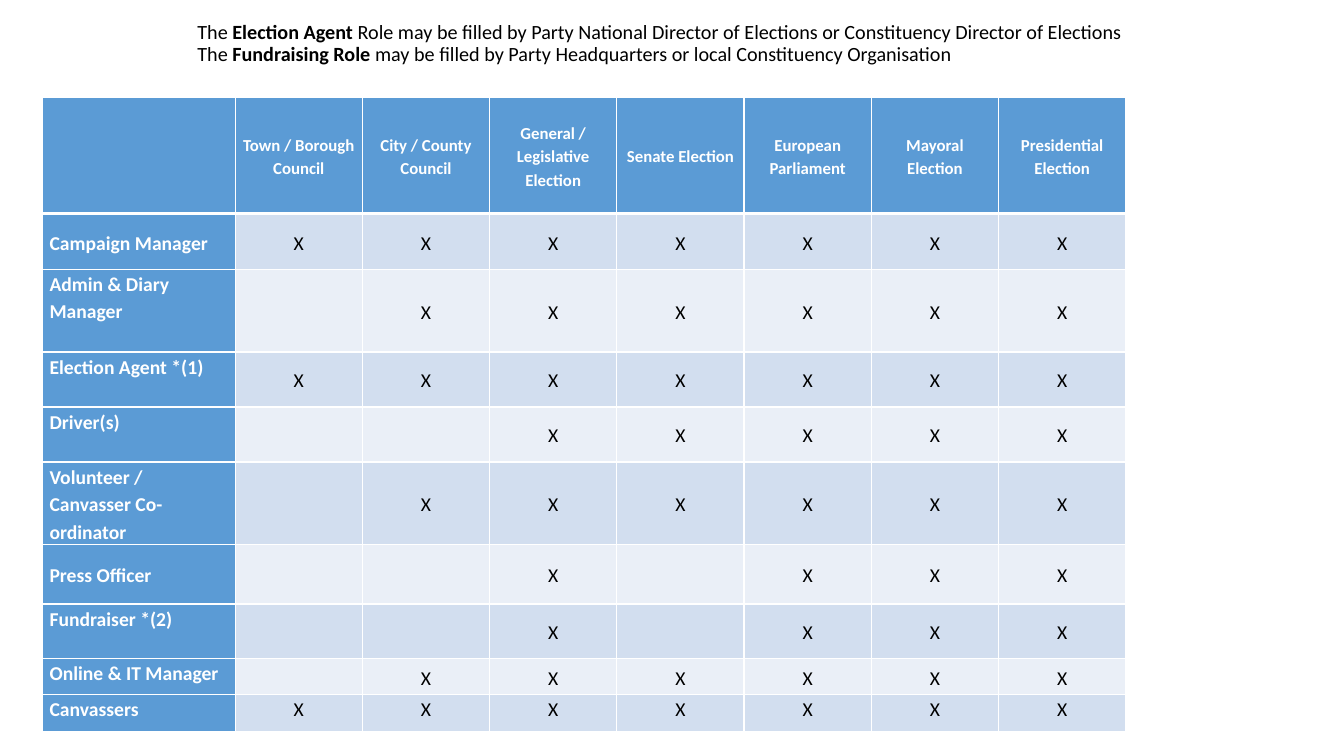
"""Build the slide that matches campaign roles to types of election."""
from dataclasses import dataclass

from lxml.etree import SubElement
from pptx import Presentation
from pptx.dml.color import RGBColor as Rgb
from pptx.enum.text import MSO_ANCHOR as Anchor, PP_ALIGN as Align
from pptx.oxml.ns import qn
from pptx.util import Pt

NOTES = [
    ("The ", "Election Agent", " Role may be filled by Party National Director of "
     "Elections or Constituency Director of Elections "),
    ("The ", "Fundraising Role", " may be filled by Party Headquarters or local "
     "Constituency Organisation"),
]
ELECTIONS = ["Town / Borough Council", "City / County Council",
             "General / Legislative Election", "Senate Election",
             "European Parliament", "Mayoral Election", "Presidential Election"]
MID, TOP = Anchor.MIDDLE, Anchor.TOP
ROLES = [
    ("Campaign Manager", "XXXXXXX", 39.8, MID, MID),
    ("Admin & Diary Manager", "-XXXXXX", 59, TOP, MID),
    ("Election Agent *(1)", "XXXXXXX", 39.3, TOP, MID),
    ("Driver(s)", "--XXXXX", 39.3, TOP, MID),
    ("Volunteer / Canvasser Co-ordinator", "-XXXXXX", 59, MID, MID),
    ("Press Officer", "--X-XXX", 42.5, MID, MID),
    ("Fundraiser *(2)", "--X-XXX", 39, TOP, MID),
    ("Online & IT Manager", "-XXXXXX", 25.6, TOP, MID),
    ("Canvassers", "XXXXXXX", 26.4, TOP, TOP),
]
HEADER_HEIGHT, ROLE_WIDTH, ELECTION_WIDTH = 82.8, 137.6, 90.9
TABLE_LEFT, TABLE_TOP = 30.4, 69.8


@dataclass(frozen=True)
class Theme:
    """Colours and type of the slide."""
    font: str = "Calibri"
    note_size: float = 14.4
    header_size: float = 12
    body_size: float = 14
    black: str = "000000"
    white: str = "FFFFFF"
    blue: str = "5B9BD5"
    bands: tuple = ("D2DEEF", "EAEFF7")


THEME = Theme()


def add_run(paragraph, text, size, color, bold):
    """Append one styled run."""
    run = paragraph.add_run()
    run.text = text
    run.font.name, run.font.size, run.font.bold = THEME.font, Pt(size), bold
    run.font.color.rgb = Rgb.from_string(color)


def add_border(cell, side, width):
    """Draw one white edge of a cell."""
    edge = SubElement(cell._tc.get_or_add_tcPr(), qn(f"a:ln{side}"), w=str(Pt(width)))
    fill = SubElement(edge, qn("a:solidFill"))
    SubElement(fill, qn("a:srgbClr"), val=THEME.white)


def fill_cell(cell, text, fill, size, color, bold, align, anchor, top=1, bottom=1):
    """Set the edges, fill and text of a cell."""
    for side, width in (("L", 1), ("R", 1), ("T", top), ("B", bottom)):
        add_border(cell, side, width)
    cell.fill.solid()
    cell.fill.fore_color.rgb = Rgb.from_string(fill)
    cell.margin_left = cell.margin_right = Pt(5)
    cell.margin_top = cell.margin_bottom = Pt(0)
    cell.vertical_anchor = anchor
    if text:
        paragraph = cell.text_frame.paragraphs[0]
        paragraph.alignment, paragraph.line_spacing = align, 1.15
        add_run(paragraph, text, size, color, bold)


def add_notes(slide):
    """Write the two remarks above the table."""
    frame = slide.shapes.add_textbox(Pt(133.9), Pt(9.4), Pt(691.9), Pt(43.9)).text_frame
    frame.word_wrap, frame.vertical_anchor = True, MID
    paragraph = frame.paragraphs[0]
    paragraph.line_spacing = 0.9
    for index, (lead, role, rest) in enumerate(NOTES):
        if index:
            paragraph.add_line_break()
        for text, bold in ((lead, False), (role, True), (rest, False)):
            add_run(paragraph, text, THEME.note_size, THEME.black, bold)


def add_roles(slide):
    """Lay out the table of roles by election."""
    heights = [HEADER_HEIGHT] + [role[2] for role in ROLES]
    widths = [ROLE_WIDTH] + [ELECTION_WIDTH] * len(ELECTIONS)
    table = slide.shapes.add_table(
        len(heights), len(widths), Pt(TABLE_LEFT), Pt(TABLE_TOP),
        Pt(sum(widths)), Pt(sum(heights))).table
    table.horz_banding = False
    for column, width in zip(table.columns, widths):
        column.width = Pt(width)
    for row, height in zip(table.rows, heights):
        row.height = Pt(height)

    for col, election in enumerate([""] + ELECTIONS):
        fill_cell(table.cell(0, col), election, THEME.blue, THEME.header_size,
                  THEME.white, True, Align.CENTER, MID, bottom=3)
    for row, (role, marks, _, role_anchor, mark_anchor) in enumerate(ROLES, 1):
        top = 3 if row == 1 else 1
        fill_cell(table.cell(row, 0), role, THEME.blue, THEME.body_size,
                  THEME.white, True, Align.LEFT, role_anchor, top)
        for col, mark in enumerate(marks, 1):
            fill_cell(table.cell(row, col), mark.strip("-"), THEME.bands[(row - 1) % 2],
                      THEME.body_size, THEME.black, False, Align.CENTER, mark_anchor, top)


def main():
    """Create and save the presentation."""
    deck = Presentation()
    deck.slide_width, deck.slide_height = Pt(960), Pt(540)
    slide = deck.slides.add_slide(deck.slide_layouts[6])
    add_notes(slide)
    add_roles(slide)
    deck.save("out.pptx")


if __name__ == "__main__":
    main()
